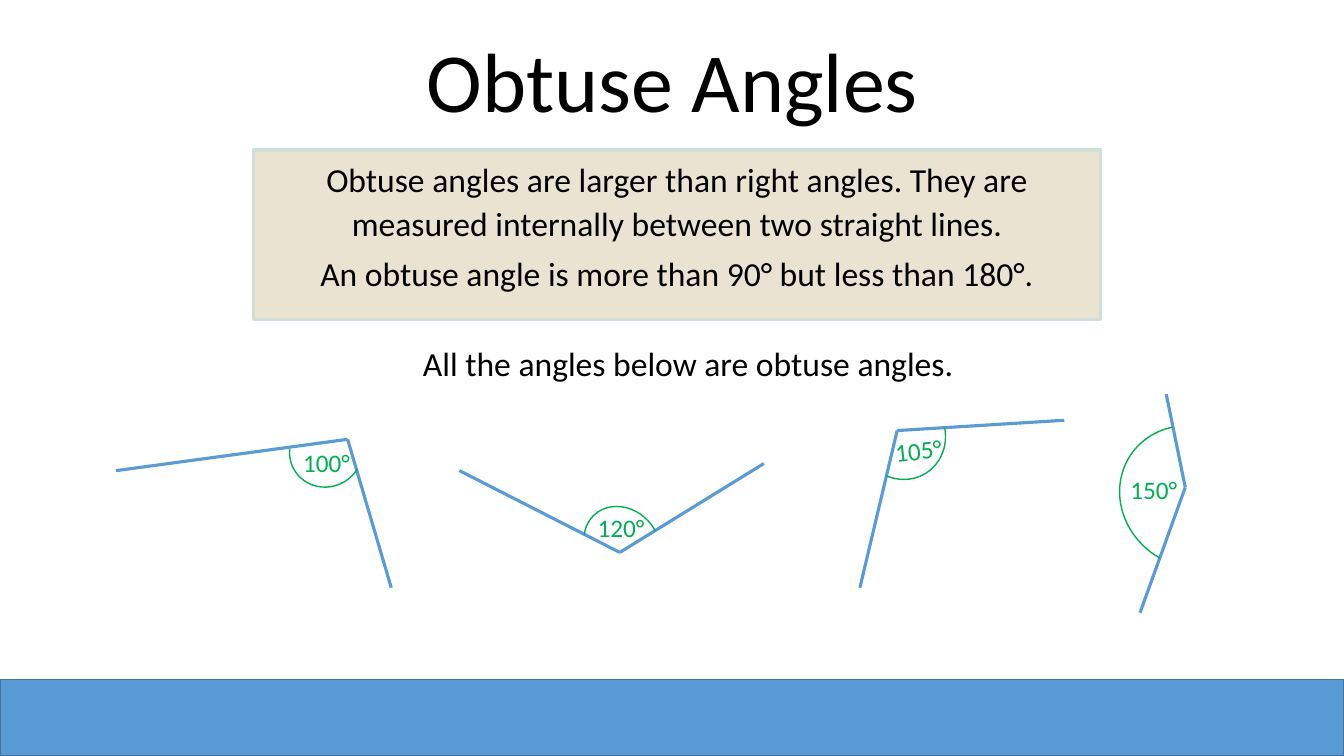
from lxml.etree import SubElement
from pptx import Presentation
from pptx.dml.color import RGBColor
from pptx.enum.shapes import MSO_CONNECTOR, MSO_SHAPE
from pptx.enum.text import MSO_ANCHOR, MSO_AUTO_SIZE, PP_ALIGN
from pptx.oxml.ns import qn
from pptx.util import Cm, Pt

BLACK = RGBColor(0x00, 0x00, 0x00)
BLUE = RGBColor(0x5B, 0x9B, 0xD5)
DARK_BLUE = RGBColor(0x43, 0x73, 0x9E)
GREEN = RGBColor(0x00, 0xB0, 0x50)
SAND = RGBColor(0xEB, 0xE3, 0xD2)
PALE_GREEN = RGBColor(0xD1, 0xDF, 0xDA)

HEADING = "Obtuse Angles"
DEFINITION = [
    ("Obtuse angles are larger than right angles. They are measured "
     "internally between two straight lines.", 1.1),
    ("An obtuse angle is more than 90° but less than 180°.", 0.9),
]
CAPTION = "All the angles below are obtuse angles."
ANGLES = [
    dict(size="100°", vertex=(8.76, 11.07), ends=[(2.92, 11.86), (9.86, 14.81)],
         arc=(7.29, 10.49, 1.85, 1.78), turn=156.4, sweep=(139.36, 16.6),
         label=(7.39, 11.15), tilt=0),
    dict(size="120°", vertex=(15.62, 13.92), ends=[(19.25, 11.68), (11.58, 11.86)],
         arc=(14.78, 12.7, 1.8, 2.08), turn=317.8, sweep=(142.15, 11.37),
         label=(14.81, 12.78), tilt=0),
    dict(size="105°", vertex=(22.61, 10.85), ends=[(26.82, 10.59), (21.67, 14.81)],
         arc=(21.49, 9.8, 2.41, 2.21), turn=58.4, sweep=(177.5, 29.8),
         label=(22.3, 10.74), tilt=354.1),
    dict(size="150°", vertex=(29.87, 12.28), ends=[(29.39, 9.93), (28.73, 15.44)],
         arc=(28.17, 10.77, 3.81, 3.51), turn=213.6, sweep=(159.18, 24.03),
         label=(28.24, 11.84), tilt=0),
]
LABEL_SIZE = (3.53, 1.02)


def lengths(values):
    """Convert centimetre numbers to slide lengths."""
    return [Cm(value) for value in values]


def place(part, box):
    """Move and resize a placeholder."""
    part.left, part.top, part.width, part.height = lengths(box)


def outline(part, color, width):
    """Give a shape or connector a plain line."""
    part.line.color.rgb = color
    part.line.width = Pt(width)


def style(paragraph, size, color=BLACK, align=PP_ALIGN.CENTER, spacing=1.0):
    """Format one paragraph."""
    paragraph.alignment = align
    paragraph.line_spacing = spacing
    paragraph.font.name = "Calibri"
    paragraph.font.size = Pt(size)
    paragraph.font.color.rgb = color


def add_text(slide, text, box, size, **look):
    """Add a one-paragraph text box."""
    textbox = slide.shapes.add_textbox(*lengths(box))
    frame = textbox.text_frame
    frame.word_wrap = True
    frame.auto_size = MSO_AUTO_SIZE.SHAPE_TO_FIT_TEXT
    frame.text = text
    style(frame.paragraphs[0], size, **look)
    return textbox


def add_heading(slide):
    """Fill the title placeholder."""
    title = slide.shapes.title
    place(title, (2.34, -0.25, 29.21, 3.68))
    frame = title.text_frame
    frame.text = HEADING
    frame.vertical_anchor = MSO_ANCHOR.BOTTOM
    frame.auto_size = MSO_AUTO_SIZE.NONE
    style(frame.paragraphs[0], 60, spacing=0.9)


def add_definition(slide):
    """Fill the body placeholder as a framed box without bullets."""
    body = slide.placeholders[1]
    place(body, (6.38, 3.78, 21.36, 4.27))
    body.fill.solid()
    body.fill.fore_color.rgb = SAND
    outline(body, PALE_GREEN, 2.25)
    frame = body.text_frame
    frame.auto_size = MSO_AUTO_SIZE.NONE
    frame.text = "\n".join(text for text, _ in DEFINITION)
    for paragraph, (_, spacing) in zip(frame.paragraphs, DEFINITION):
        paragraph.space_before = Pt(10)
        paragraph.line_spacing = spacing
        properties = paragraph._p.get_or_add_pPr()
        properties.set("marL", "0")
        properties.set("indent", "0")
        SubElement(properties, qn("a:buNone"))
        style(paragraph, 24, spacing=spacing)


def add_angle(slide, angle):
    """Draw two arms, their arc and the size label."""
    for end in angle["ends"]:
        arm = slide.shapes.add_connector(
            MSO_CONNECTOR.STRAIGHT, *lengths(angle["vertex"] + end))
        outline(arm, BLUE, 2.25)
        SubElement(arm._element.spPr, qn("a:effectLst"))
    arc = slide.shapes.add_shape(MSO_SHAPE.ARC, *lengths(angle["arc"]))
    arc.adjustments[0], arc.adjustments[1] = angle["sweep"]
    arc.rotation = angle["turn"]
    arc.shadow.inherit = False
    arc.fill.background()
    outline(arc, GREEN, 1)
    label = add_text(slide, angle["size"], angle["label"] + LABEL_SIZE, 18,
                     color=GREEN, align=PP_ALIGN.LEFT)
    label.rotation = angle["tilt"]


def main():
    """Build the obtuse angles slide."""
    deck = Presentation()
    deck.slide_width, deck.slide_height = lengths((33.87, 19.05))
    slide = deck.slides.add_slide(deck.slide_layouts[1])
    add_heading(slide)
    add_definition(slide)
    footer = slide.shapes.add_shape(
        MSO_SHAPE.RECTANGLE, *lengths((0, 17.12, 33.87, 1.93)))
    footer.shadow.inherit = False
    footer.fill.solid()
    footer.fill.fore_color.rgb = BLUE
    outline(footer, DARK_BLUE, 1)
    add_text(slide, CAPTION, (9.47, 8.51, 15.75, 1.27), 24)
    for angle in ANGLES:
        add_angle(slide, angle)
    deck.save("out.pptx")


if __name__ == "__main__":
    main()
